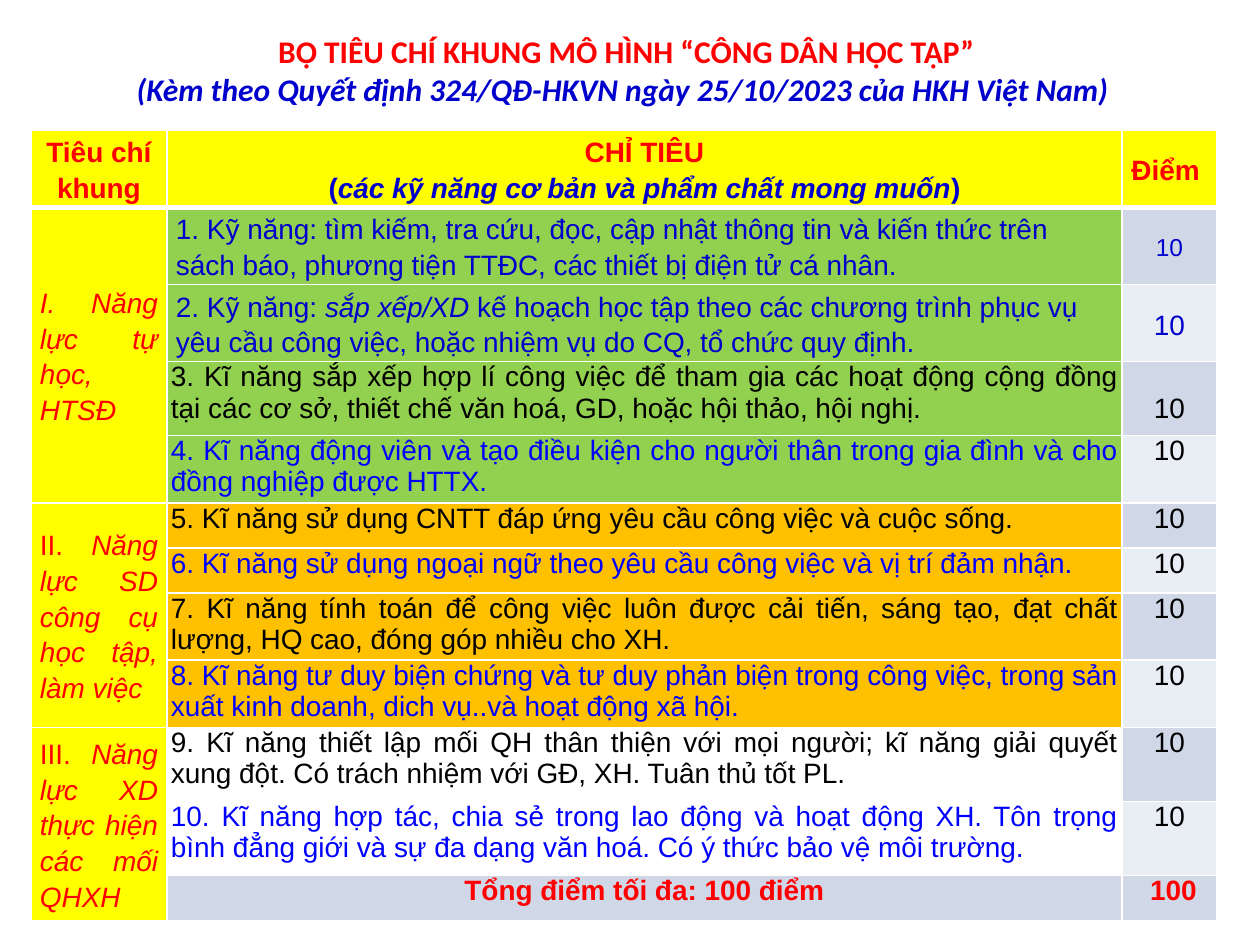
from lxml import etree
from pptx import Presentation
from pptx import util as u
from pptx.dml.color import RGBColor
from pptx.enum import text as t
from pptx.oxml import ns

SCALE = 914400 / 126  # EMU in one px
RED, NAVY, BLUE, BLACK, WHITE = "FF0000", "0000CC", "0000FF", "000000", "FFFFFF"
YELLOW, GREEN, ORANGE = "FFFF00", "92D050", "FFC000"
BANDS = ["D0D8E8", "E9EDF4"]
CENTER, LEFT, JUSTIFY = t.PP_ALIGN.CENTER, t.PP_ALIGN.LEFT, t.PP_ALIGN.JUSTIFY

COLUMNS = [136, 955, 95]
ROWS = [71, 74, 74, 74, 63, 45, 45, 63, 63, 74, 74, 32]

# Framework criteria: numeral, its style, name, rows covered
CRITERIA = [
    ("I. ", "i", "Năng lực tự học, HTSĐ", 4),
    ("II. ", "", "Năng lực SD công cụ học tập, làm việc", 4),
    ("III. ", "", "Năng lực XD thực hiện các mối QHXH", 3),
]
# Skills: runs of (wording, style), text colour, fill
SKILLS = [
    ([("1. Kỹ năng: tìm kiếm, tra cứu, đọc, cập nhật thông tin và kiến thức trên "
       "sách báo, phương tiện TTĐC, các thiết bị điện tử cá nhân.", "")], NAVY, GREEN),
    ([("2. Kỹ năng: ", ""), ("sắp xếp/XD ", "i"),
      ("kế hoạch học tập theo các chương trình phục vụ yêu cầu công việc, "
       "hoặc nhiệm vụ do CQ, tổ chức quy định.", "")], NAVY, GREEN),
    ([("3. Kĩ năng sắp xếp hợp lí công việc để tham gia các hoạt động cộng đồng "
       "tại các cơ sở, thiết chế văn hoá, GD, hoặc hội thảo, hội nghị.", "")], BLACK, GREEN),
    ([("4. Kĩ năng động viên và tạo điều kiện cho người thân trong gia đình "
       "và cho đồng nghiệp được HTTX.", "")], BLUE, GREEN),
    ([("5. Kĩ năng sử dụng CNTT đáp ứng yêu cầu công việc và cuộc sống.", "")], BLACK, ORANGE),
    ([("6. Kĩ năng sử dụng ngoại ngữ theo yêu cầu công việc và vị trí đảm nhận.", "")],
     BLUE, ORANGE),
    ([("7. Kĩ năng tính toán để công việc luôn được cải tiến, sáng tạo, đạt chất "
       "lượng, HQ cao, đóng góp nhiều cho XH.", "")], BLACK, ORANGE),
    ([("8. Kĩ năng tư duy biện chứng và tư duy phản biện trong công việc, trong sản "
       "xuất kinh doanh, dich vụ..và hoạt động xã hội.", "")], BLUE, ORANGE),
    ([("9. Kĩ năng thiết lập mối QH thân thiện với mọi người; kĩ năng giải quyết "
       "xung đột. Có trách nhiệm với GĐ, XH. Tuân thủ tốt PL.", "")], BLACK, None),
    ([("10. Kĩ năng hợp tác, chia sẻ trong lao động và hoạt động XH. Tôn trọng "
       "bình đẳng giới và sự đa dạng văn hoá. Có ý thức bảo vệ môi trường.", "")], BLUE, None),
]


def px(length):
    return u.Emu(round(length * SCALE))


def color(hex_string):
    return RGBColor.from_string(hex_string)


def write(frame, paragraphs, align, size, font, spacing=None):
    """Each paragraph is a list of runs (wording, style letters, colour)."""
    for i, runs in enumerate(paragraphs):
        para = frame.paragraphs[0] if i == 0 else frame.add_paragraph()
        para.alignment = align
        if spacing:
            para.line_spacing = spacing
        for wording, style, ink in runs:
            run = para.add_run()
            run.text = wording
            run.font.name, run.font.size = font, u.Pt(size)
            run.font.bold, run.font.italic = "b" in style, "i" in style
            run.font.color.rgb = color(ink)


def draw_borders(cell, bottom):
    for side, width in (("L", 1), ("R", 1), ("T", 1), ("B", bottom)):
        line = etree.SubElement(cell._tc.get_or_add_tcPr(), ns.qn("a:ln" + side),
                                w=str(u.Pt(width)))
        fill = etree.SubElement(line, ns.qn("a:solidFill"))
        etree.SubElement(fill, ns.qn("a:srgbClr"), val=WHITE)


def fill_cell(cell, paragraphs, align, fill, roomy=False, size=16, top=0, bottom=1):
    """Roomy cells are centred vertically, with wider margins and line spacing."""
    draw_borders(cell, bottom)
    if fill:
        cell.fill.solid()
        cell.fill.fore_color.rgb = color(fill)
    else:
        cell.fill.background()
    cell.margin_left = cell.margin_right = px(9 if roomy else 4)
    cell.margin_top, cell.margin_bottom = px(top), 0
    cell.vertical_anchor = t.MSO_ANCHOR.MIDDLE if roomy else t.MSO_ANCHOR.TOP
    write(cell.text_frame, paragraphs, align, size, "Arial", 1.15 if roomy else None)


def add_title(slide, left, top, width, height):
    title = slide.shapes.add_textbox(px(left), px(top), px(width), px(height)).text_frame
    title.word_wrap = True
    write(title, [
        [("BỘ TIÊU CHÍ KHUNG MÔ HÌNH “CÔNG DÂN HỌC TẬP”", "b", RED)],
        [("(Kèm theo Quyết định 324/QĐ-HKVN ngày 25/10/2023 của HKH Việt Nam) ", "bi", NAVY)],
    ], CENTER, 18, "Calibri")


def add_criteria_table(slide, left, top, width, height):
    frame = slide.shapes.add_table(len(ROWS), len(COLUMNS), px(left), px(top),
                                   px(width), px(height))
    table = frame.table
    table.first_row = table.horz_banding = False
    for column, size in zip(table.columns, COLUMNS):
        column.width = px(size)
    for row, size in zip(table.rows, ROWS):
        row.height = px(size)
    frame.height = px(height)

    # Header
    headings = [
        [[("Tiêu chí khung", "b", RED)]],
        [[("CHỈ TIÊU", "b", RED)],
         [("(", "b", NAVY), ("các kỹ năng cơ bản và phẩm chất mong muốn", "bi", NAVY),
          (")", "b", NAVY)]],
        [[("Điểm ", "b", RED)]],
    ]
    for i, heading in enumerate(headings):
        fill_cell(table.cell(0, i), heading, CENTER, YELLOW, roomy=True, bottom=3)

    # Framework criteria
    first = 1
    for numeral, style, name, count in CRITERIA:
        criterion = table.cell(first, 0)
        criterion.merge(table.cell(first + count - 1, 0))
        fill_cell(criterion, [[(numeral, style, RED), (name, "i", RED)]],
                  JUSTIFY, YELLOW, roomy=True)
        first += count

    # Skills and their points
    for row, (runs, ink, fill) in enumerate(SKILLS, start=1):
        roomy = row <= 2
        skill = [(wording, style, ink) for wording, style in runs]
        fill_cell(table.cell(row, 1), [skill], LEFT if roomy else JUSTIFY, fill, roomy)
        fill_cell(table.cell(row, 2), [[("10", "", NAVY if roomy else BLACK)]], CENTER,
                  BANDS[(row - 1) % 2], roomy, size=14 if row == 1 else 16,
                  top=32 if row == 3 else 0)

    # Total
    for i, wording in enumerate(["Tổng điểm tối đa: 100 điểm", " 100"], start=1):
        fill_cell(table.cell(len(ROWS) - 1, i), [[(wording, "b", RED)]], CENTER, BANDS[0])


def main():
    deck = Presentation()
    deck.slide_width, deck.slide_height = px(1260), px(945)
    slide = deck.slides.add_slide(deck.slide_layouts[6])
    add_title(slide, 15, 26, 1223, 89)
    add_criteria_table(slide, 31, 130, 1187, 791)
    deck.save("out.pptx")


if __name__ == "__main__":
    main()
